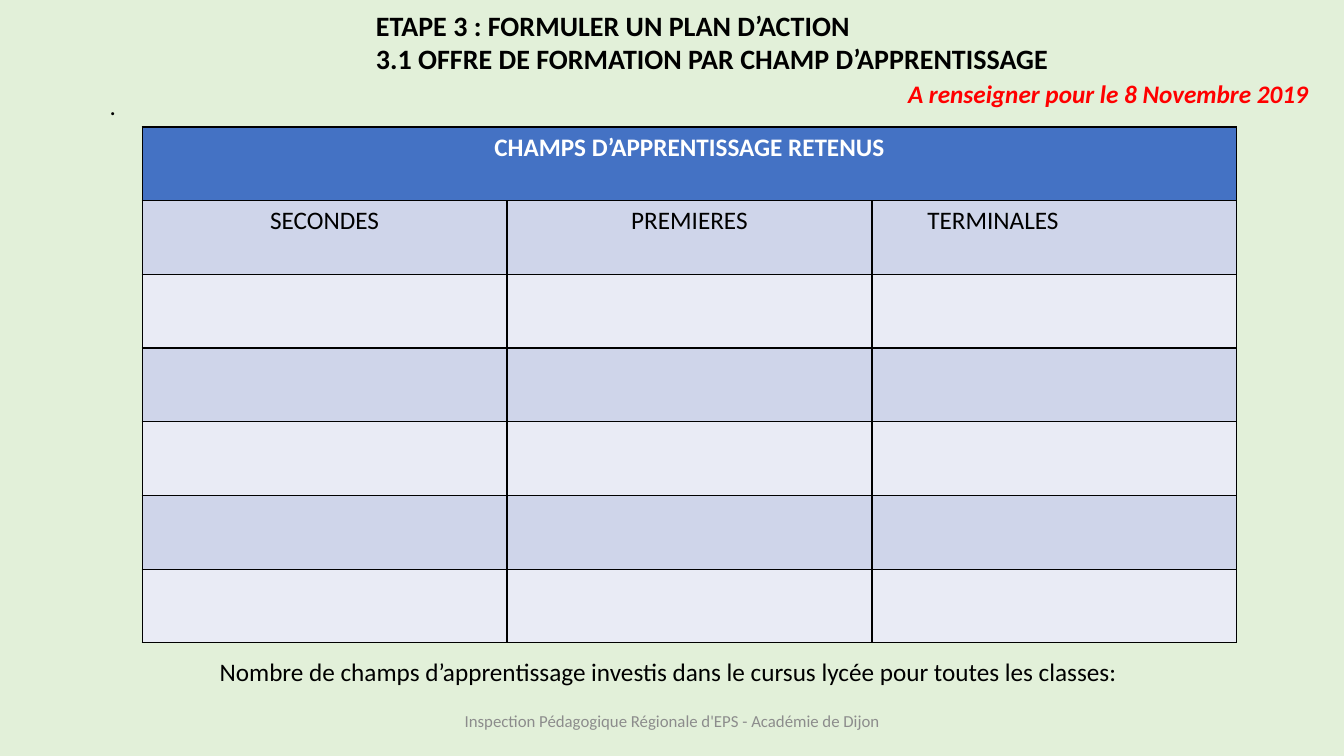
from lxml import etree
from pptx import Presentation
from pptx.dml.color import RGBColor
from pptx.enum.text import MSO_ANCHOR, MSO_AUTO_SIZE, PP_ALIGN
from pptx.oxml.ns import qn
from pptx.util import Inches, Pt

LEFT, CENTER, RIGHT = PP_ALIGN.LEFT, PP_ALIGN.CENTER, PP_ALIGN.RIGHT
TOP, MIDDLE = MSO_ANCHOR.TOP, MSO_ANCHOR.MIDDLE
NO_FIT = MSO_AUTO_SIZE.NONE
TITLE_ONLY = 5

GREEN = RGBColor(0xE2, 0xF0, 0xD9)
BLUE = RGBColor(0x44, 0x72, 0xC4)
BAND_DARK = RGBColor(0xCF, 0xD5, 0xEA)
BAND_LIGHT = RGBColor(0xE9, 0xEB, 0xF5)
BLACK = RGBColor(0, 0, 0)
WHITE = RGBColor(0xFF, 0xFF, 0xFF)
RED = RGBColor(0xFF, 0, 0)
GREY = RGBColor(0x8C, 0x8C, 0x8C)


class Deck:
    """Slide builder working on a grid of 160 columns by 90 rows."""

    font = "Calibri"
    cols, rows = 160, 90

    def __init__(self):
        self.prs = Presentation()
        self.prs.slide_width, self.prs.slide_height = Inches(13.33), Inches(7.5)
        self.s = self.prs.slides.add_slide(self.prs.slide_layouts[TITLE_ONLY])
        fill = self.s.background.fill
        fill.solid()
        fill.fore_color.rgb = GREEN

    def box(self, col, row, width, height):
        dx = self.prs.slide_width / self.cols
        dy = self.prs.slide_height / self.rows
        return int(col * dx), int(row * dy), int(width * dx), int(height * dy)

    def run(self, p, text, size=18, color=BLACK, bold=False, italic=False, align=LEFT):
        p.alignment = align
        r = p.add_run()
        r.text = text
        f = r.font
        f.name, f.size, f.bold, f.italic = self.font, Pt(size), bold, italic
        f.color.rgb = color

    def title(self, grid, lines, note):
        sp = self.s.shapes.title
        sp.left, sp.top, sp.width, sp.height = self.box(*grid)
        tf = sp.text_frame
        tf.word_wrap, tf.auto_size, tf.vertical_anchor = True, NO_FIT, TOP
        for i, line in enumerate(lines):
            p = tf.add_paragraph() if i else tf.paragraphs[0]
            self.run(p, line, size=20, bold=True)
        p = tf.add_paragraph()
        p.space_before = Pt(2)
        self.run(p, note, color=RED, bold=True, italic=True, align=RIGHT)

    def text(self, grid, text, anchor=TOP, **style):
        tf = self.s.shapes.add_textbox(*self.box(*grid)).text_frame
        tf.word_wrap, tf.vertical_anchor = True, anchor
        self.run(tf.paragraphs[0], text, **style)

    def cell(self, cell, color):
        tc_pr = cell._tc.get_or_add_tcPr()
        for side in ("a:lnL", "a:lnR", "a:lnT", "a:lnB"):
            ln = etree.SubElement(tc_pr, qn(side), w=str(Pt(1)))
            fill = etree.SubElement(ln, qn("a:solidFill"))
            etree.SubElement(fill, qn("a:srgbClr"), val=str(BLACK))
        cell.fill.solid()
        cell.fill.fore_color.rgb = color

    def table(self, grid, heading, levels, blank_rows):
        n_rows = blank_rows + 2
        table = self.s.shapes.add_table(n_rows, len(levels), *self.box(*grid)).table
        for i in range(n_rows):
            color = BLUE if i == 0 else BAND_DARK if i % 2 else BAND_LIGHT
            for j in range(len(levels)):
                self.cell(table.cell(i, j), color)
        head = table.cell(0, 0)
        head.merge(table.cell(0, len(levels) - 1))
        self.run(head.text_frame.paragraphs[0], heading, color=WHITE, bold=True, align=CENTER)
        for j, (level, align, margin) in enumerate(levels):
            cell = table.cell(1, j)
            cell.margin_left = Inches(margin)
            self.run(cell.text_frame.paragraphs[0], level, align=align)


def main():
    deck = Deck()
    deck.text((11.88, 10.2, 140.5, 4.8), ".")
    deck.table(
        (16.92, 15.12, 130.32, 61.44),
        "CHAMPS D’APPRENTISSAGE RETENUS",
        [("SECONDES", CENTER, 0.1), ("PREMIERES", CENTER, 0.1), ("TERMINALES", LEFT, 0.55)],
        blank_rows=5,
    )
    deck.title(
        (43.56, 0.36, 113.4, 13.2),
        ["ETAPE 3 : FORMULER UN PLAN D’ACTION",
         "3.1 OFFRE DE FORMATION PAR CHAMP D’APPRENTISSAGE"],
        "A renseigner pour le 8 Novembre 2019",
    )
    deck.text(
        (24.96, 77.52, 119.04, 4.8),
        "Nombre de champs d’apprentissage investis dans le cursus lycée pour toutes les classes:",
    )
    deck.text(
        (53.04, 83.4, 54, 4.8),
        "Inspection Pédagogique Régionale d'EPS - Académie de Dijon",
        anchor=MIDDLE, size=12, color=GREY, align=CENTER,
    )
    deck.prs.save("out.pptx")


if __name__ == "__main__":
    main()
